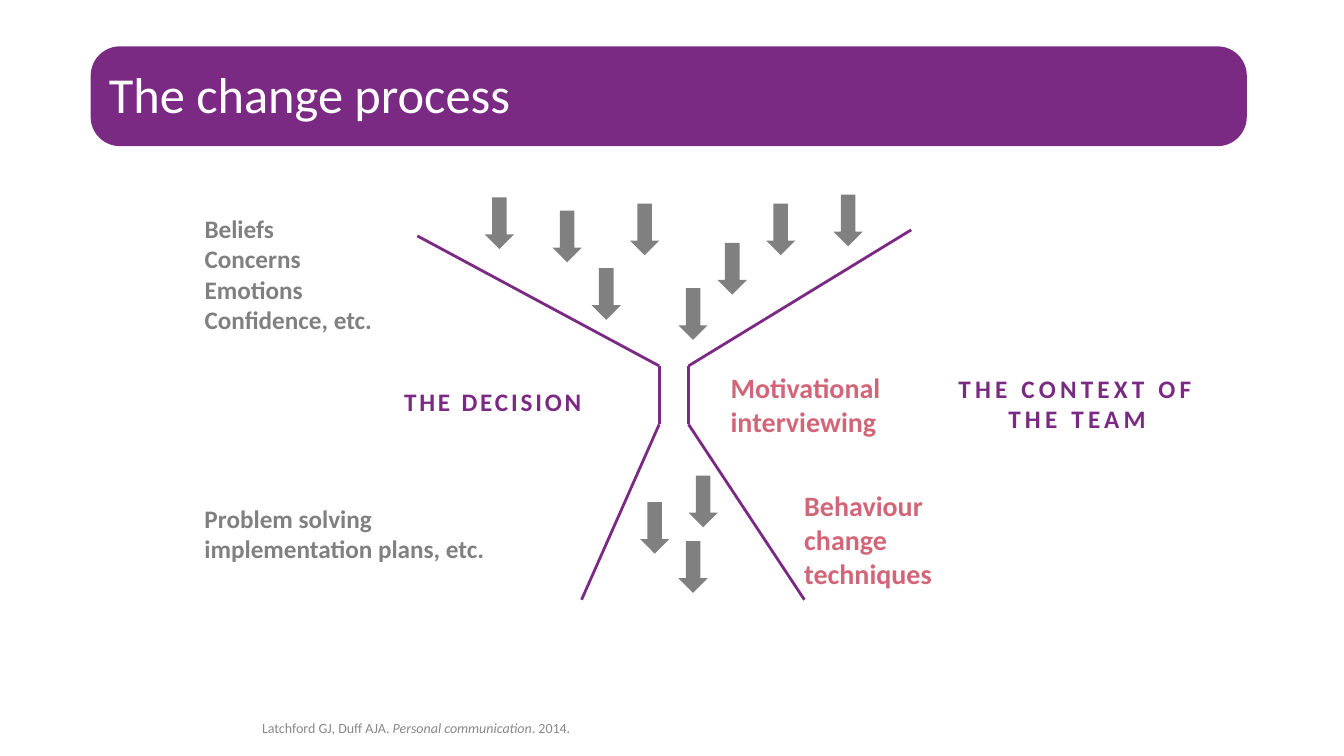
from itertools import pairwise

from lxml import etree
from pptx import Presentation
from pptx.dml.color import RGBColor
from pptx.enum import shapes, text
from pptx.oxml import ns
from pptx.util import Pt

PURPLE = RGBColor(0x7B, 0x2A, 0x84)
ROSE = RGBColor(0xD1, 0x66, 0x78)
GREY = RGBColor(0x80, 0x80, 0x80)
PALE_GREY = RGBColor(0x89, 0x89, 0x89)
WHITE = RGBColor(0xFF, 0xFF, 0xFF)
FONT = "Calibri"

# The two walls of the funnel, from top to bottom
LEFT_WALL = [(298.1, 168.5), (470.9, 261.4), (470.9, 303.1), (415.4, 428.4)]
RIGHT_WALL = [(650.9, 164.2), (491.8, 261.4), (491.8, 303.1), (574.6, 428.4)]

# Left and top of each arrow
ARROW_SIZE = (20.9, 36.9)
ARROWS_IN = [(346.3, 141), (394.6, 150.4), (422.6, 191.6), (450, 145.4),
             (484.6, 205.9), (547.2, 145.4), (512.6, 173.5), (595.4, 139)]
ARROWS_OUT = [(457.2, 358.6), (484.6, 386.6), (491.8, 339.8)]


def place(s, left, top, width, height):
    s.left, s.top, s.width, s.height = map(Pt, (left, top, width, height))


def add_run(p, words, size, color, bold=False, italic=False, spacing=0):
    r = p.add_run()
    r.text = words
    r.font.name = FONT
    r.font.size = Pt(size)
    r.font.bold = bold
    r.font.italic = italic
    r.font.color.rgb = color
    if spacing:
        r.font._element.set("spc", str(spacing * 100))


def add_solid(slide, kind, color, left, top, width, height):
    s = slide.shapes.add_shape(kind, *map(Pt, (left, top, width, height)))
    s.shadow.inherit = False
    s.fill.solid()
    s.fill.fore_color.rgb = color
    s.line.fill.background()
    return s


def add_wall(slide, points):
    for start, end in pairwise(points):
        s = slide.shapes.add_connector(
            shapes.MSO_CONNECTOR.STRAIGHT, *map(Pt, start + end))
        s.line.color.rgb = PURPLE
        s.line.width = Pt(2)
        etree.SubElement(s._element.spPr, ns.qn("a:effectLst"))


def add_label(slide, box, lines, size, color, spacing=0,
              align=text.PP_ALIGN.LEFT):
    s = slide.shapes.add_textbox(*map(Pt, box))
    tf = s.text_frame
    tf.word_wrap = True
    for i, line in enumerate(lines):
        p = tf.add_paragraph() if i else tf.paragraphs[0]
        p.alignment = align
        add_run(p, line, size, color, bold=True, spacing=spacing)


def setup_placeholder(s, box, anchor, line_spacing):
    place(s, *box)
    tf = s.text_frame
    tf.margin_left = tf.margin_right = tf.margin_top = tf.margin_bottom = 0
    tf.auto_size = text.MSO_AUTO_SIZE.NONE
    tf.word_wrap = True
    tf.vertical_anchor = anchor
    p = tf.paragraphs[0]
    p.alignment = text.PP_ALIGN.LEFT
    p.line_spacing = line_spacing
    p.space_before = Pt(0)
    return p


def add_title(slide, words):
    banner = add_solid(slide, shapes.MSO_SHAPE.ROUNDED_RECTANGLE, PURPLE,
                       64.8, 33.1, 825.8, 71.3)
    banner.adjustments[0] = 0.293
    # Send the banner behind the title
    slide.shapes._spTree.insert(2, banner._element)
    p = setup_placeholder(slide.shapes.title, (77.8, 44.6, 805, 51.8),
                          text.MSO_ANCHOR.MIDDLE, 0.8)
    add_run(p, words, 36, WHITE)


def add_reference(slide, parts):
    p = setup_placeholder(slide.placeholders[1], (187.2, 465.1, 707, 61.2),
                          text.MSO_ANCHOR.BOTTOM, 0.9)
    pPr = p._p.get_or_add_pPr()
    pPr.set("marL", "0")
    pPr.set("indent", "0")
    etree.SubElement(pPr, ns.qn("a:buNone"))
    for words, italic in parts:
        add_run(p, words, 10, PALE_GREY, italic=italic)


def main():
    prs = Presentation()
    prs.slide_width, prs.slide_height = Pt(960), Pt(540)
    slide = prs.slides.add_slide(prs.slide_layouts[1])

    # Title and reference
    add_title(slide, "The change process")
    add_reference(slide, [("Latchford GJ, Duff AJA. ", False),
                          ("Personal communication", True),
                          (". 2014.", False)])

    # Funnel
    add_wall(slide, LEFT_WALL)
    add_wall(slide, RIGHT_WALL)
    for left, top in ARROWS_IN + ARROWS_OUT:
        add_solid(slide, shapes.MSO_SHAPE.DOWN_ARROW, GREY,
                  left, top, *ARROW_SIZE)

    # Techniques
    add_label(slide, (514.8, 261.4, 144, 46.8),
              ["Motivational interviewing"], 20, ROSE)
    add_label(slide, (567.4, 345.6, 213.8, 67.7),
              ["Behaviour", "change", "techniques"], 20, ROSE)

    # What goes in and what comes out
    add_label(slide, (139, 149, 229, 94.3),
              ["Beliefs", "Concerns", "Emotions", "Confidence, etc."],
              18, GREY)
    add_label(slide, (139, 355.7, 227.5, 51.1),
              ["Problem solving", "implementation plans, etc."], 18, GREY)

    # Headings
    add_label(slide, (281.5, 272.2, 173.5, 24.5),
              ["THE DECISION"], 18, PURPLE, spacing=2)
    add_label(slide, (671.8, 262.8, 195.1, 51.1),
              ["THE CONTEXT OF THE TEAM"], 18, PURPLE, spacing=3,
              align=text.PP_ALIGN.CENTER)

    prs.save("out.pptx")


if __name__ == "__main__":
    main()
